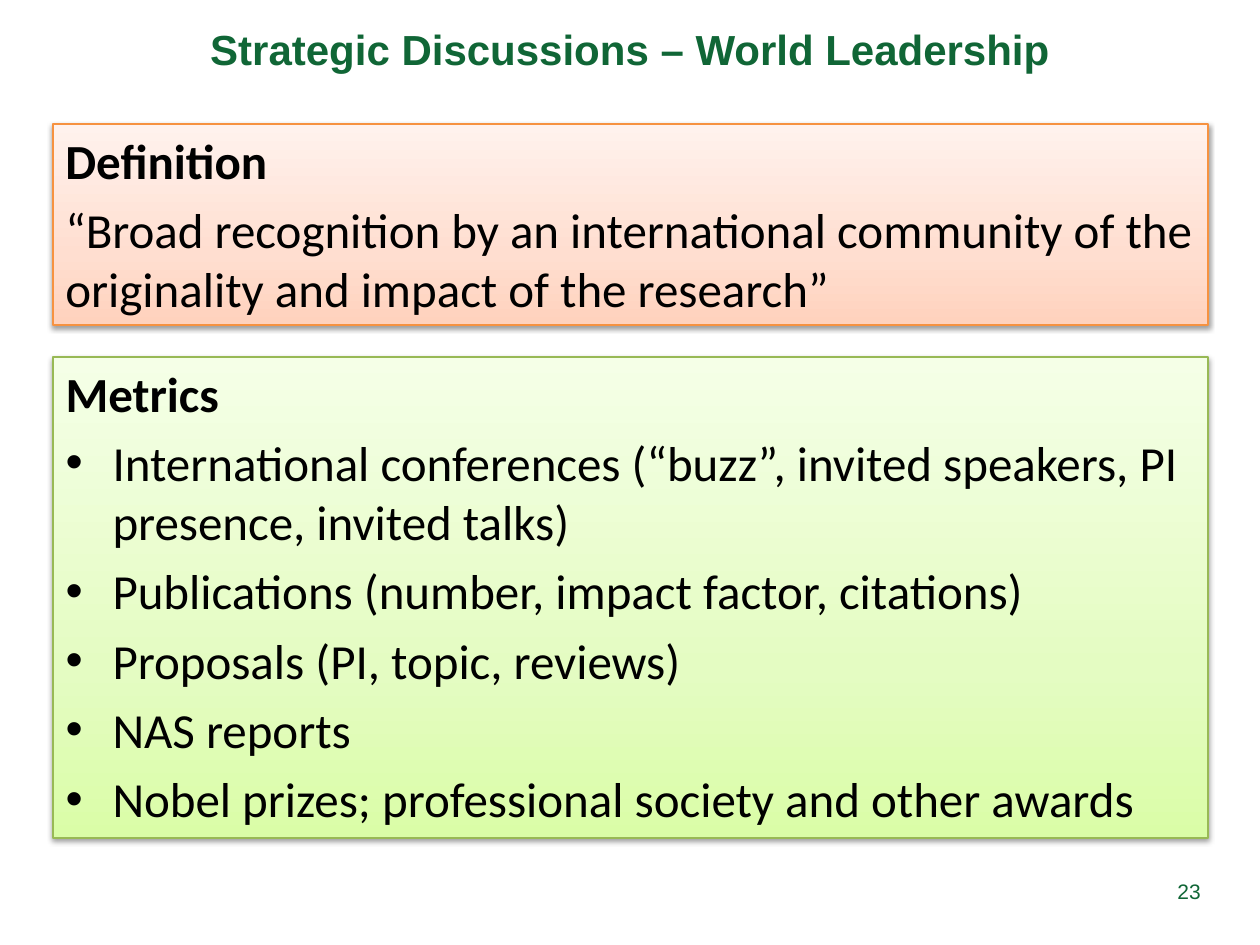
from lxml import etree
from pptx import Presentation
from pptx import util as u
from pptx.dml.color import RGBColor
from pptx.enum import shapes, text
from pptx.oxml import parse_xml
from pptx.oxml.ns import qn, nsdecls

# Content
TITLE = "Strategic Discussions – World Leadership"
GOAL = ["Definition",
        "“Broad recognition by an international community of the "
        "originality and impact of the research”"]
METRICS = ["Metrics",
           "International conferences (“buzz”, invited speakers, PI presence, invited talks)",
           "Publications (number, impact factor, citations)",
           "Proposals (PI, topic, reviews)",
           "NAS reports",
           "Nobel prizes; professional society and other awards"]
PAGE = "23"

# Look
HEX = {"green": "106636", "ink": "000000", "orange": "F69240", "lime": "98B955"}
FADE = {"orange": ["FFD2BD", "FFDED0", "FFF2ED"],
        "lime": ["DAFDA7", "E4FCC2", "F5FFE7"]}
STOPS = [0, 35, 100]
LEFT, WIDE = 53, 1155
INDENT, TAB = 47, 275


def px(n):
    return u.Emu(round(n * 914400 / 126))


def place(shape, x, y, w, h):
    shape.left, shape.top, shape.width, shape.height = map(px, (x, y, w, h))


def mark(para, bullet):
    """Set the hanging bullet and tab, or clear an inherited bullet."""
    prop = para._p.get_or_add_pPr()
    prop.set("marL", str(px(INDENT) if bullet else 0))
    prop.set("indent", str(-px(INDENT) if bullet else 0))
    if not bullet:
        etree.SubElement(prop, qn("a:buNone"))
        return
    etree.SubElement(prop, qn("a:buFont"), typeface="Arial")
    etree.SubElement(prop, qn("a:buChar"), char="•")
    tabs = etree.SubElement(prop, qn("a:tabLst"))
    etree.SubElement(tabs, qn("a:tab"), pos=str(px(TAB)), algn="l")


def write(shape, lines, font="Calibri", size=28, color="ink", head=False,
          bullet=False, align=text.PP_ALIGN.LEFT,
          anchor=text.MSO_ANCHOR.TOP, wrap=True):
    frame = shape.text_frame
    frame.word_wrap = wrap
    frame.auto_size = text.MSO_AUTO_SIZE.NONE
    frame.vertical_anchor = anchor
    frame.margin_left = frame.margin_right = u.Inches(0.1)
    frame.margin_top = frame.margin_bottom = u.Inches(0.05)
    for i, line in enumerate(lines):
        para = frame.paragraphs[0] if i == 0 else frame.add_paragraph()
        mark(para, bullet and i > 0)
        para.alignment = align
        para.space_before = u.Pt(6 if i else 0)
        run = para.add_run()
        run.text = line
        run.font.name, run.font.size = font, u.Pt(size)
        run.font.bold = head and i == 0
        run.font.color.rgb = RGBColor.from_string(HEX[color])


def panel(shape, tint):
    """Give a box its upward fade, outline and soft shadow."""
    shape.fill.gradient()
    shape.fill.gradient_angle = 90
    shape.line.color.rgb = RGBColor.from_string(HEX[tint])
    shape.line.width = u.Pt(0.75)
    shape.shadow.inherit = False
    prop = shape._element.spPr
    fade = prop.find(qn("a:gradFill")).find(qn("a:gsLst"))
    for old in list(fade):
        fade.remove(old)
    for pos, color in zip(STOPS, FADE[tint]):
        stop = etree.SubElement(fade, qn("a:gs"), pos=str(pos * 1000))
        etree.SubElement(stop, qn("a:srgbClr"), val=color)
    prop.find(qn("a:effectLst")).append(parse_xml(
        f'<a:outerShdw {nsdecls("a")} blurRad="40000" dist="20000" '
        'dir="5400000" rotWithShape="0"><a:srgbClr val="000000">'
        '<a:alpha val="38000"/></a:srgbClr></a:outerShdw>'))


def main():
    deck = Presentation()
    deck.slide_width, deck.slide_height = px(1260), px(945)
    slide = deck.slides.add_slide(deck.slide_layouts[1])

    # Title
    title = slide.shapes.title
    place(title, 0, -30, 1260, 158)
    write(title, [TITLE], font="Arial", size=24, color="green", head=True,
          align=text.PP_ALIGN.CENTER, anchor=text.MSO_ANCHOR.MIDDLE)

    # Definition and metrics panels
    goal = slide.shapes.add_shape(shapes.MSO_SHAPE.RECTANGLE, 0, 0, 0, 0)
    body = slide.placeholders[1]
    for box, y, h, tint, lines, bullet in [
            (goal, 124, 201, "orange", GOAL, False),
            (body, 357, 481, "lime", METRICS, True)]:
        place(box, LEFT, y, WIDE, h)
        panel(box, tint)
        write(box, lines, head=True, bullet=bullet)

    # Page number
    page = slide.shapes.add_textbox(0, 0, 0, 0)
    place(page, 1165, 872, 49, 38)
    write(page, [PAGE], font="Arial", size=12, color="green", wrap=False)

    deck.save("out.pptx")


if __name__ == "__main__":
    main()
